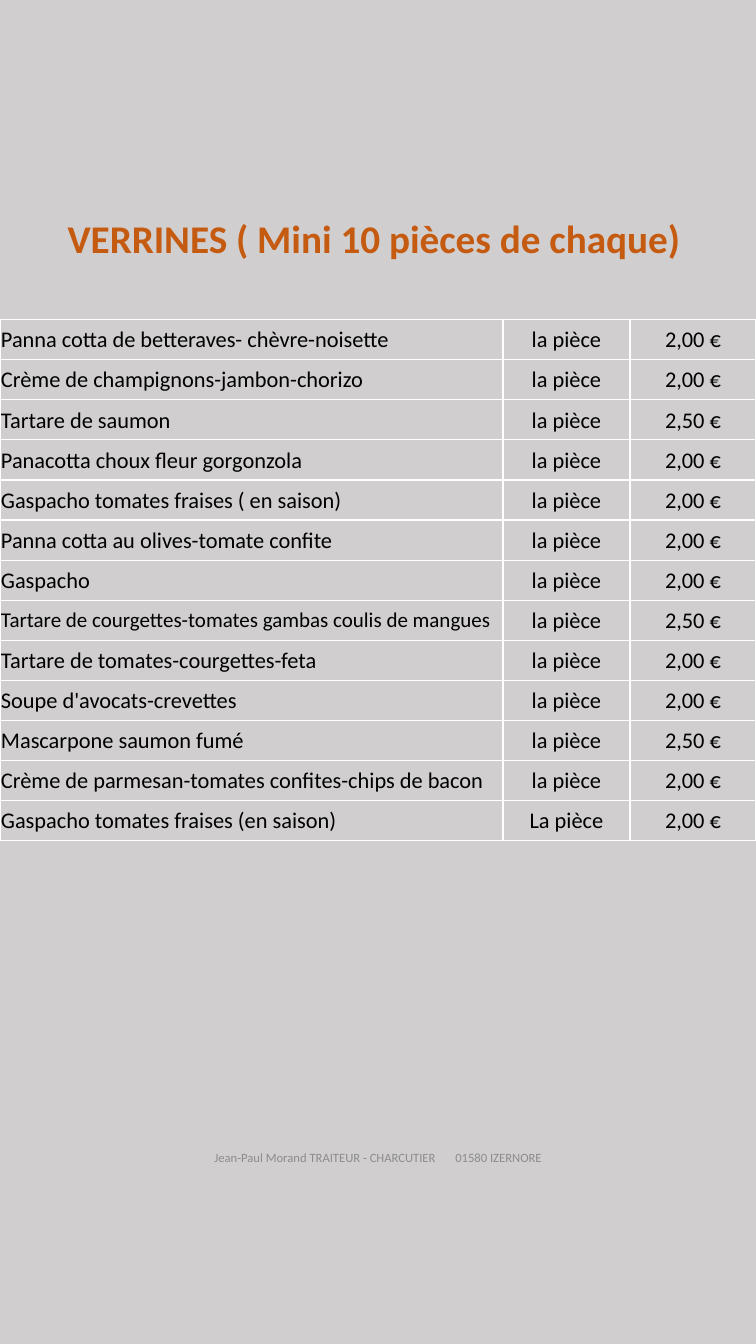
from dataclasses import dataclass

from lxml.etree import SubElement
from pptx import Presentation
from pptx.dml.color import RGBColor
from pptx.enum.text import MSO_ANCHOR as Anchor, MSO_AUTO_SIZE as AutoSize, PP_ALIGN as Align
from pptx.oxml.ns import qn
from pptx.slide import Slide
from pptx.table import _Cell as Cell
from pptx.text.text import TextFrame, _Run as Run
from pptx.util import Inches, Pt

COLORS = {
    "background": "D0CECE",
    "title": "C55A11",
    "text": "000000",
    "footer": "8C8C8C",
    "border": "FFFFFF",
}
FONT = "Calibri"
COLUMN_WIDTHS = (4.99, 1.26, 1.25)
TABLE_HEIGHT = 5.17


@dataclass
class Verrine:
    name: str
    price: str = "2,00 €"
    unit: str = "la pièce"
    name_size: float = 16


VERRINES = [
    Verrine("Panna cotta de betteraves- chèvre-noisette"),
    Verrine("Crème de champignons-jambon-chorizo"),
    Verrine("Tartare de saumon", "2,50 €"),
    Verrine("Panacotta choux fleur gorgonzola"),
    Verrine("Gaspacho tomates fraises ( en saison)"),
    Verrine("Panna cotta au olives-tomate confite"),
    Verrine("Gaspacho"),
    Verrine("Tartare de courgettes-tomates gambas coulis de mangues", "2,50 €", name_size=15),
    Verrine("Tartare de tomates-courgettes-feta"),
    Verrine("Soupe d'avocats-crevettes"),
    Verrine("Mascarpone saumon fumé", "2,50 €"),
    Verrine("Crème de parmesan-tomates confites-chips de bacon"),
    Verrine("Gaspacho tomates fraises (en saison)", unit="La pièce"),
]


def rgb(name: str) -> RGBColor:
    return RGBColor.from_string(COLORS[name])


def add_text(tf: TextFrame, text: str, *, size: float = 16, color: str = "text",
             bold: bool = False, align: Align = Align.LEFT) -> Run:
    """Append a run to the first paragraph of the frame."""
    p = tf.paragraphs[0]
    p.alignment = align
    r = p.add_run()
    r.text = text
    r.font.name = FONT
    r.font.size = Pt(size)
    r.font.bold = bold
    r.font.color.rgb = rgb(color)
    return r


def format_cell(cell: Cell) -> None:
    cell.margin_left = cell.margin_right = cell.margin_top = Inches(0.01)
    cell.margin_bottom = 0
    cell.vertical_anchor = Anchor.MIDDLE
    tc_pr = cell._tc.get_or_add_tcPr()
    for side in ("a:lnL", "a:lnR", "a:lnT", "a:lnB"):
        ln = SubElement(tc_pr, qn(side), w=str(Pt(1)))
        fill = SubElement(ln, qn("a:solidFill"))
        SubElement(fill, qn("a:srgbClr"), val=COLORS["border"])
    cell.fill.solid()
    cell.fill.fore_color.rgb = rgb("background")


def add_title(slide: Slide) -> None:
    title = slide.shapes.title
    title.left, title.top = Inches(0.57), Inches(2.08)
    title.width, title.height = Inches(6.35), Inches(0.57)
    tf = title.text_frame
    tf.word_wrap = False
    tf.auto_size = AutoSize.SHAPE_TO_FIT_TEXT
    tf.vertical_anchor = Anchor.TOP
    add_text(tf, "VERRINES ( Mini 10 pièces de chaque)", size=28, color="title", bold=True)


def add_price_table(slide: Slide) -> None:
    table = slide.shapes.add_table(
        len(VERRINES), len(COLUMN_WIDTHS),
        0, Inches(3.17), Inches(sum(COLUMN_WIDTHS)), Inches(TABLE_HEIGHT)).table
    for column, width in zip(table.columns, COLUMN_WIDTHS):
        column.width = Inches(width)
    for row, verrine in zip(table.rows, VERRINES):
        row.height = Inches(TABLE_HEIGHT / len(VERRINES))
        name, unit, price = row.cells
        for cell in row.cells:
            format_cell(cell)
        add_text(name.text_frame, verrine.name, size=verrine.name_size)
        add_text(unit.text_frame, verrine.unit, align=Align.CENTER)
        add_text(price.text_frame, verrine.price, align=Align.CENTER)


def add_footer(slide: Slide) -> None:
    """Centre the caterer and the town, set apart by one widened space."""
    tf = slide.shapes.add_textbox(
        Inches(2.02), Inches(11.12), Inches(3.46), Inches(0.71)).text_frame
    tf.word_wrap = True
    tf.vertical_anchor = Anchor.MIDDLE
    style = {"size": 9, "color": "footer", "align": Align.CENTER}
    add_text(tf, "Jean-Paul Morand TRAITEUR - CHARCUTIER", **style)
    gap = add_text(tf, " ", **style)
    gap.font._element.set("spc", "1220")
    add_text(tf, "01580 IZERNORE", **style)


def main() -> None:
    prs = Presentation()
    prs.slide_width, prs.slide_height = Inches(7.5), Inches(13.33)
    slide = prs.slides.add_slide(prs.slide_layouts[5])
    slide.background.fill.solid()
    slide.background.fill.fore_color.rgb = rgb("background")
    add_footer(slide)
    add_title(slide)
    add_price_table(slide)
    prs.save("out.pptx")


if __name__ == "__main__":
    main()
